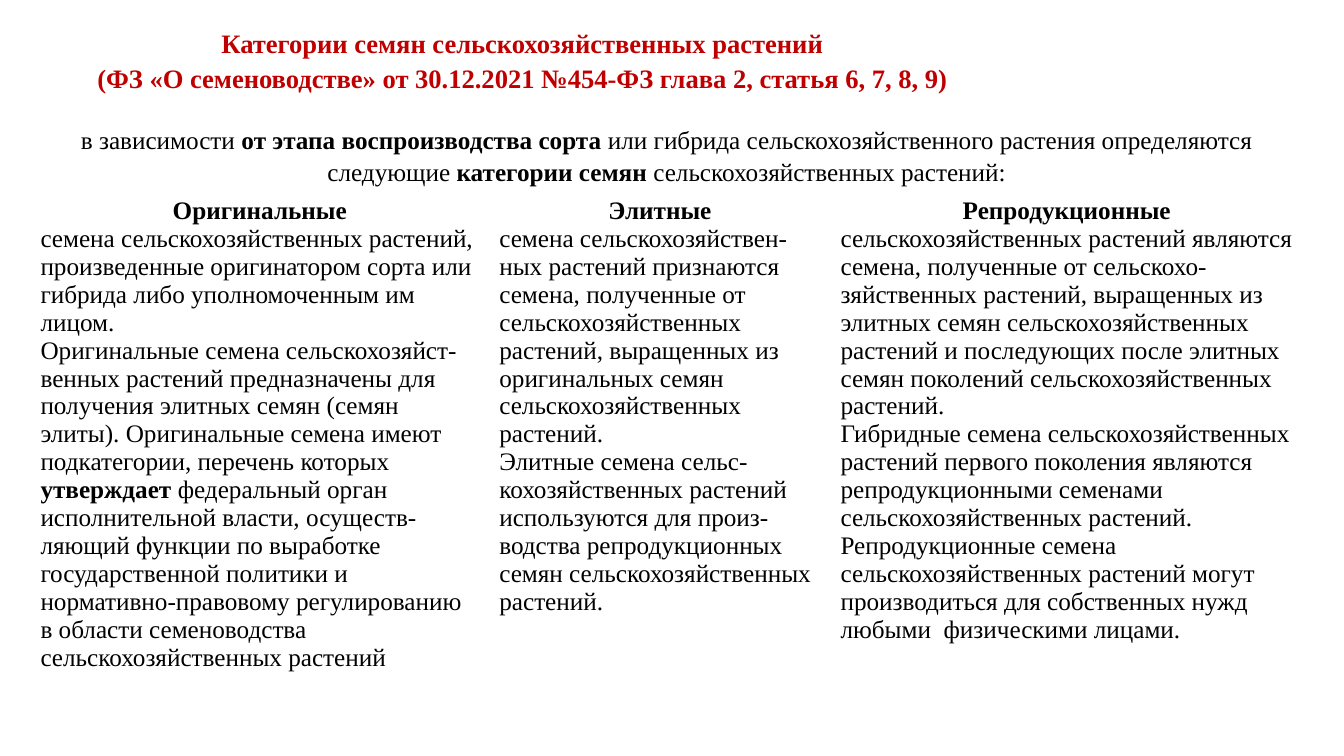
import pptx
import pptx.dml.color
import pptx.enum.text
import pptx.oxml
import pptx.oxml.ns
import pptx.util

HEX = {"red": "C00000", "black": "000000", "white": "FFFFFF"}
ALIGN = pptx.enum.text.PP_ALIGN
MIDDLE = pptx.enum.text.MSO_ANCHOR.MIDDLE

TITLE = [
    "Категории семян сельскохозяйственных растений",
    "(ФЗ «О семеноводстве» от 30.12.2021 №454-ФЗ глава 2, статья 6, 7, 8, 9)",
]
INTRO = (
    "в зависимости **от этапа воспроизводства сорта **или гибрида "
    "сельскохозяйственного растения определяются следующие "
    "**категории семян **сельскохозяйственных растений:"
)
KINDS = [
    [
        "**Оригинальные**",
        "семена сельскохозяйственных растений, произведенные оригинатором "
        "сорта или гибрида либо уполномоченным им лицом.",
        "Оригинальные семена сельскохозяйст-венных растений предназначены "
        "для получения элитных семян (семян элиты). Оригинальные семена "
        "имеют подкатегории, перечень которых **утверждает **федеральный "
        "орган исполнительной власти, осуществ-ляющий функции по выработке "
        "государственной политики и нормативно-правовому регулированию в "
        "области семеноводства сельскохозяйственных растений",
    ],
    [
        "**Элитные**",
        "семена сельскохозяйствен-ных растений признаются семена, полученные "
        "от сельскохозяйственных растений, выращенных из оригинальных семян "
        "сельскохозяйственных растений.",
        "Элитные семена сельс-кохозяйственных растений используются для "
        "произ-водства репродукционных семян сельскохозяйственных растений.",
    ],
    [
        "**Репродукционные**",
        "сельскохозяйственных растений являются семена, полученные от "
        "сельскохо-зяйственных растений, выращенных из элитных семян "
        "сельскохозяйственных растений и последующих после элитных семян "
        "поколений сельскохозяйственных растений.",
        "Гибридные семена сельскохозяйственных растений первого поколения "
        "являются репродукционными семенами сельскохозяйственных растений. "
        "Репродукционные семена сельскохозяйственных растений могут "
        "производиться для собственных нужд любыми  физическими лицами.",
    ],
]


def px(num):
    return pptx.util.Emu(num * 9525)


def write(para, text, size=18, color="black", align=ALIGN.LEFT, space=None, before=0):
    """Fill a paragraph; text between ** marks is bold."""
    para.alignment = align
    para.space_before = pptx.util.Pt(before)
    if space:
        para.line_spacing = space
    for spot, part in enumerate(text.split("**")):
        if part:
            run = para.add_run()
            run.text = part
            run.font.name = "Times New Roman"
            run.font.size = pptx.util.Pt(size)
            run.font.bold = spot % 2 == 1
            run.font.color.rgb = pptx.dml.color.RGBColor.from_string(HEX[color])


def edge(cell, side, width):
    """Draw a white border on one side (L, R, T or B) of a cell."""
    line = pptx.oxml.parse_xml(
        f'<a:ln{side} {pptx.oxml.ns.nsdecls("a")} w="{width * 12700}"><a:solidFill>'
        f'<a:srgbClr val="{HEX["white"]}"/></a:solidFill></a:ln{side}>'
    )
    cell._tc.get_or_add_tcPr().append(line)


class Deck:
    def __init__(self, wide, high):
        self.prs = pptx.Presentation()
        self.prs.slide_width, self.prs.slide_height = px(wide), px(high)
        self.slide = self.prs.slides.add_slide(self.prs.slide_layouts[5])

    def title(self, lines, left, top, wide, high):
        shape = self.slide.shapes.title
        shape.left, shape.top = px(left), px(top)
        shape.width, shape.height = px(wide), px(high)
        frame = shape.text_frame
        frame.word_wrap = True
        frame.auto_size = pptx.enum.text.MSO_AUTO_SIZE.NONE
        frame.vertical_anchor = MIDDLE
        for spot, line in enumerate(lines):
            para = frame.add_paragraph() if spot else frame.paragraphs[0]
            write(para, f"**{line}**", size=19, color="red",
                  align=ALIGN.CENTER, before=2 * spot)

    def table(self, left, top, cols, rows):
        frame = self.slide.shapes.add_table(
            len(rows), len(cols), px(left), px(top), px(sum(cols)), px(sum(rows)))
        grid = frame.table
        grid.first_row = grid.horz_banding = False
        for col, wide in zip(grid.columns, cols):
            col.width = px(wide)
        for row, high in zip(grid.rows, rows):
            row.height = px(high)
        for spot, row in enumerate(grid.rows):
            for cell in row.cells:
                for side in "LRTB":
                    edge(cell, side, 3 if (spot, side) in ((0, "B"), (1, "T")) else 1)
                cell.fill.background()
        return grid


def main():
    deck = Deck(1280, 720)
    deck.title(TITLE, 60, 18, 875, 79)
    grid = deck.table(29, 112, [437, 325, 450], [71, 496])
    head = grid.cell(0, 0)
    head.merge(grid.cell(0, 2))
    write(head.text_frame.paragraphs[0], INTRO, align=ALIGN.CENTER, space=1.15)
    for col, paras in enumerate(KINDS):
        frame = grid.cell(1, col).text_frame
        for spot, text in enumerate(paras):
            para = frame.add_paragraph() if spot else frame.paragraphs[0]
            write(para, text, align=ALIGN.LEFT if spot else ALIGN.CENTER)
    deck.prs.save("out.pptx")


if __name__ == "__main__":
    main()
